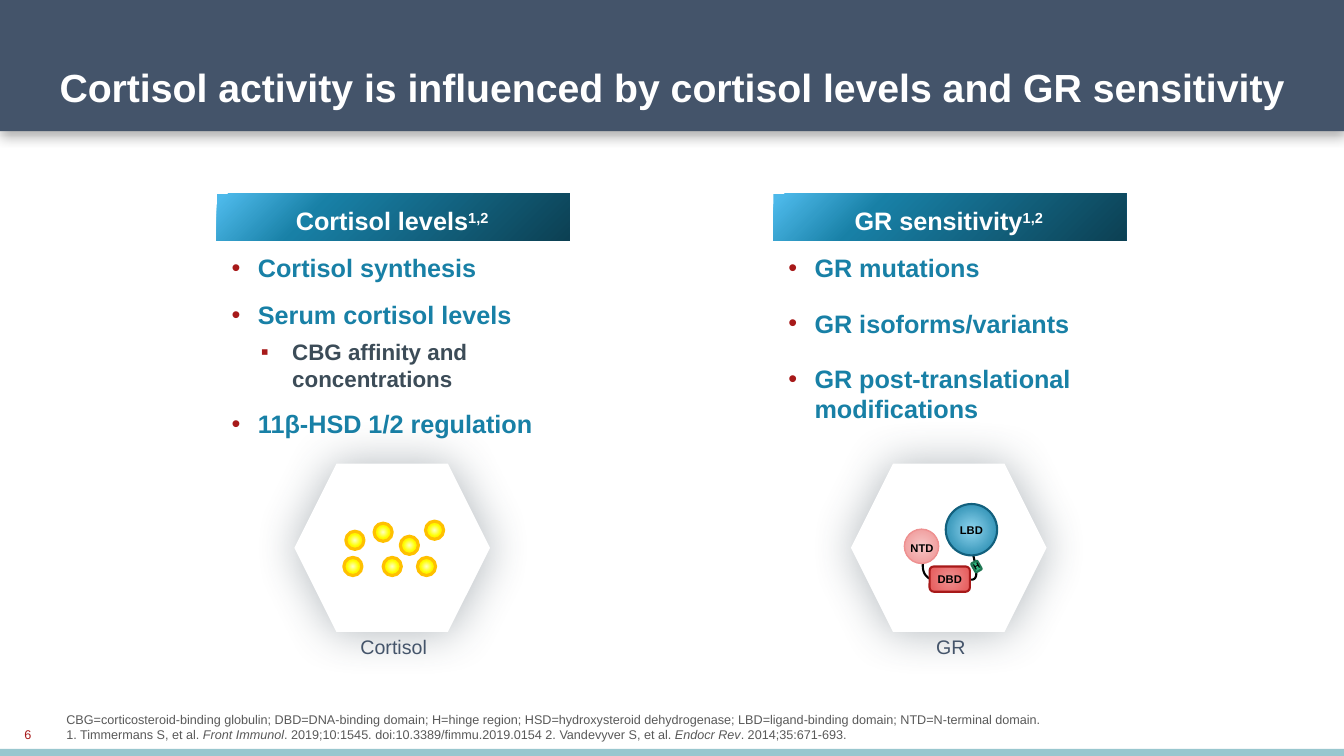
"""Build the slide on cortisol levels and GR sensitivity."""
from pptx import Presentation
from pptx.dml.color import RGBColor
from pptx.enum.shapes import MSO_SHAPE
from pptx.enum.text import MSO_ANCHOR, MSO_AUTO_SIZE, PP_ALIGN
from pptx.oxml import parse_xml
from pptx.oxml.ns import nsdecls, qn
from pptx.util import Inches, Pt

RECT, ROUND, OVAL = MSO_SHAPE.RECTANGLE, MSO_SHAPE.ROUNDED_RECTANGLE, MSO_SHAPE.OVAL
SNIP, HEXAGON = MSO_SHAPE.SNIP_2_DIAG_RECTANGLE, MSO_SHAPE.HEXAGON
TOP, MIDDLE, BOTTOM = MSO_ANCHOR.TOP, MSO_ANCHOR.MIDDLE, MSO_ANCHOR.BOTTOM
LEFT, CENTER, RIGHT = PP_ALIGN.LEFT, PP_ALIGN.CENTER, PP_ALIGN.RIGHT
NO_FIT = MSO_AUTO_SIZE.NONE

FONT = "Arial"
WHITE, BLACK, SLATE, GREY = "FFFFFF", "000000", "44546A", "595959"
RED, BLUE, DARK = "A71919", "1880A6", "3C4C58"
LINEAR = '<a:lin ang="2700000" scaled="0"/>'
RADIAL = ('<a:path path="circle"><a:fillToRect l="50000" t="50000" '
          'r="50000" b="50000"/></a:path>')
BANNER = [(2, "4DB9EA"), (29, BLUE), (100, "0C4053")]
GOLD = [(0, "FFFFBD"), (45, "FFFF00"), (96, "FFC000")]

rgb = RGBColor.from_string


def add(kind, box, fill, line=None, width=1.5, shade=RADIAL, shadow=None):
    """Add a shape with a plain or gradient fill and an optional shadow."""
    sp = s.shapes.add_shape(kind, *map(Inches, box))
    sp.shadow.inherit = False
    sp.fill.solid()
    spPr = sp.element.spPr
    if isinstance(fill, str):
        sp.fill.fore_color.rgb = rgb(fill)
    else:
        stops = "".join(f'<a:gs pos="{pos * 1000}"><a:srgbClr val="{color}"/></a:gs>'
                        for pos, color in fill)
        grad = parse_xml(f'<a:gradFill {nsdecls("a")} rotWithShape="1">'
                         f'<a:gsLst>{stops}</a:gsLst>{shade}</a:gradFill>')
        spPr.replace(spPr.find(qn("a:solidFill")), grad)
    if line:
        sp.line.color.rgb = rgb(line)
        sp.line.width = Pt(width)
    else:
        sp.line.fill.background()
    if shadow:
        color, alpha, blur, dist, angle = shadow
        spPr.find(qn("a:effectLst")).append(parse_xml(
            f'<a:outerShdw {nsdecls("a")} blurRad="{Pt(blur)}" dist="{Pt(dist)}" '
            f'dir="{angle * 60000}" algn="ctr" rotWithShape="0"><a:srgbClr val="{color}">'
            f'<a:alpha val="{alpha * 1000}"/></a:srgbClr></a:outerShdw>'))
    return sp


def write(p, parts, size, color, bold=False, align=LEFT):
    """Write the parts as runs of one paragraph and return the runs."""
    p.alignment = align
    for part in parts:
        r = p.add_run()
        r.text = part
        r.font.name, r.font.size, r.font.bold = FONT, Pt(size), bold
        r.font.color.rgb = rgb(color)
    return p.runs


prs = Presentation()
prs.slide_width, prs.slide_height = Inches(13.33), Inches(7.5)
s = prs.slides.add_slide(prs.slide_layouts[5])

add(RECT, (0, -0.01, 13.33, 1.31), SLATE, shadow=(BLACK, 30, 8, 4, 90))
add(RECT, (0, 7.43, 13.33, 0.1), "99C7CF")

title = s.shapes.title
title.element.getparent().append(title.element)
title.left, title.top, title.width, title.height = map(Inches, (0.49, 0.09, 12.53, 1.06))
tf = title.text_frame
tf.auto_size, tf.vertical_anchor, tf.word_wrap = NO_FIT, BOTTOM, True
p = tf.paragraphs[0]
p.line_spacing = 0.9
write(p, ["Cortisol activity is influenced by cortisol levels and GR sensitivity"],
      28, WHITE, True)

footnotes = [
    ["CBG=corticosteroid-binding globulin; DBD=DNA-binding domain; H=hinge region; "
     "HSD=hydroxysteroid dehydrogenase; LBD=ligand-binding domain; NTD=N-terminal domain."],
    ["1. Timmermans S, et al. ", "Front Immunol",
     ". 2019;10:1545. doi:10.3389/fimmu.2019.0154 2. Vandevyver S, et al. ",
     "Endocr Rev", ". 2014;35:671-693."],
]
tf = s.shapes.add_textbox(*map(Inches, (0.56, 6.84, 11.04, 0.57))).text_frame
tf.word_wrap, tf.vertical_anchor = True, BOTTOM
for i, parts in enumerate(footnotes):
    p = tf.add_paragraph() if i else tf.paragraphs[0]
    for r in write(p, parts, 9, GREY)[1::2]:
        r.font.italic = True

columns = [
    (2.15, 2.44, "Cortisol levels", [
        ("Cortisol synthesis", 12, 0),
        ("Serum cortisol levels", 12, 0),
        ("CBG affinity and concentrations", 6, 1),
        ("11β-HSD 1/2 regulation", 12, 0)]),
    (7.67, 2.93, "GR sensitivity", [
        ("GR mutations", 12, 0),
        ("GR isoforms/variants", 18, 0),
        ("GR post-translational modifications", 18, 0)]),
]
levels = [(0.26, -0.26, "•", 18, BLUE), (0.6, -0.31, "▪", 16, DARK)]
for left, height, heading, bullets in columns:
    card = add(SNIP, (left, 1.92, 3.5, 4.64), WHITE)
    card.adjustments[0], card.adjustments[1] = 0.077, 0
    add(RECT, (left, 1.92, 3.5, 0.47), BANNER, shade=LINEAR)
    tf = s.shapes.add_textbox(*map(Inches, (left + 0.05, 1.99, 3.38, height))).text_frame
    tf.word_wrap = True
    runs = write(tf.paragraphs[0], [heading, "1,2"], 18, WHITE, True, CENTER)
    runs[1].font._element.set("baseline", "30000")
    for text, before, level in bullets:
        margin, indent, char, size, color = levels[level]
        p = tf.add_paragraph()
        p.level = level
        pPr = p._p.get_or_add_pPr()
        pPr.set("marL", str(Inches(margin)))
        pPr.set("indent", str(Inches(indent)))
        pPr.append(parse_xml(f'<a:buClr {nsdecls("a")}><a:srgbClr val="{RED}"/></a:buClr>'))
        pPr.append(parse_xml(f'<a:buFont {nsdecls("a")} typeface="{FONT}"/>'))
        pPr.append(parse_xml(f'<a:buChar {nsdecls("a")} char="{char}"/>'))
        p.space_before = Pt(before)
        write(p, [text], size, color, True)
    add(HEXAGON, (left + 0.77, 4.6, 1.94, 1.67), WHITE, shadow=(DARK, 40, 33, 0, 0))

molecules = [(3.43, 5.27), (3.8, 5.53), (3.41, 5.53), (4.22, 5.17),
             (3.71, 5.19), (3.97, 5.32), (4.14, 5.53)]
for x, y in molecules:
    add(OVAL, (x, y, 0.18, 0.18), GOLD, "FFC000", 2.25)

linkers = [
    (0, [(9.17, 5.51), (9.14, 5.61), (9.14, 5.71), (9.24, 5.75)]),
    (11.8, [(9.62, 5.49), (9.73, 5.71), (9.73, 5.77), (9.59, 5.75)]),
]
steps = 16
for rotation, controls in linkers:
    points = []
    for t in (i / steps for i in range(steps + 1)):
        weights = ((1 - t) ** 3, 3 * t * (1 - t) ** 2, 3 * t ** 2 * (1 - t), t ** 3)
        points.append([Inches(sum(w * c[axis] for w, c in zip(weights, controls)))
                       for axis in (0, 1)])
    builder = s.shapes.build_freeform(*points[0])
    builder.add_line_segments(points[1:], close=False)
    sp = builder.convert_to_shape()
    sp.shadow.inherit = False
    sp.fill.background()
    sp.line.color.rgb = rgb(BLACK)
    sp.line.width = Pt(1.5)
    sp.rotation = rotation

domains = [
    (OVAL, (9.38, 5, 0.51, 0.51), [(0, "8FD5EF"), (96, BLUE)], "12607D", 1.5, 0, "LBD", 8),
    (OVAL, (8.97, 5.25, 0.34, 0.34), [(0, "F7C8C8"), (100, "EE9090")], "EE9090", 1, 0, "", 8),
    (ROUND, (9.22, 5.62, 0.4, 0.25), [(0, "EE9090"), (100, "E65959")], RED, 1.5, 0, "DBD", 8),
    (ROUND, (9.65, 5.57, 0.07, 0.1), "2FB780", "1F7753", 1.5, 330.6, "H", 6),
]
for kind, box, fill, line, width, rotation, name, size in domains:
    sp = add(kind, box, fill, line, width)
    sp.rotation = rotation
    if name:
        tf = sp.text_frame
        tf.margin_left = tf.margin_right = 0
        tf.vertical_anchor = MIDDLE
        write(tf.paragraphs[0], [name], size, BLACK, True, CENTER)

labels = [
    ((8.93, 5.32, 0.43, 0.24), "NTD", 8, BLACK, True, CENTER, TOP),
    ((3.47, 6.25, 0.87, 0.34), "Cortisol", 14, SLATE, False, CENTER, TOP),
    ((9.18, 6.25, 0.5, 0.34), "GR", 14, SLATE, False, CENTER, TOP),
    ((0.01, 7.09, 0.4, 0.4), "6", 9, RED, False, RIGHT, MIDDLE),
]
for box, text, size, color, bold, align, anchor in labels:
    tf = s.shapes.add_textbox(*map(Inches, box)).text_frame
    tf.word_wrap, tf.vertical_anchor = False, anchor
    write(tf.paragraphs[0], [text], size, color, bold, align)

prs.save("out.pptx")
